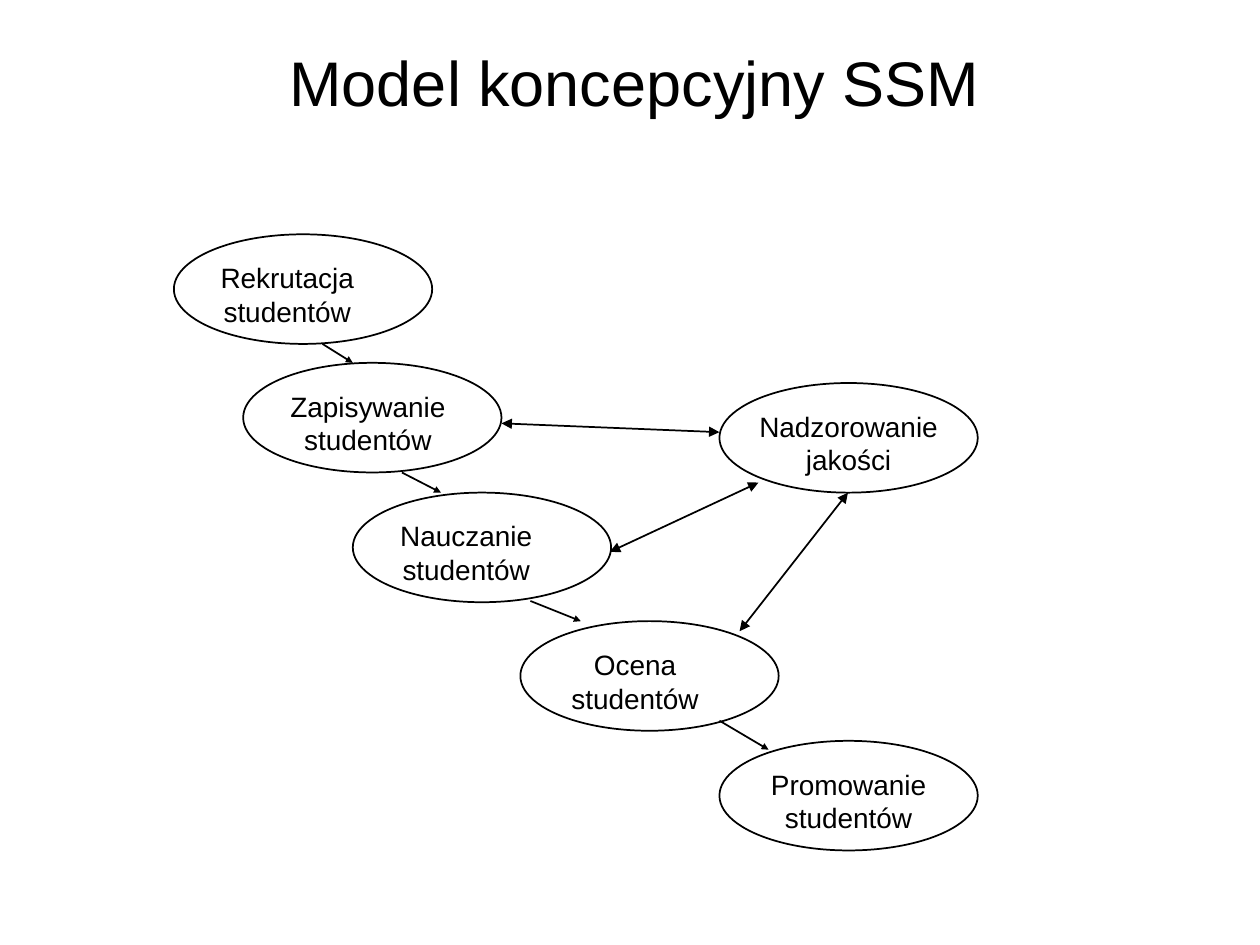
from dataclasses import dataclass

from lxml import etree
from pptx import Presentation
from pptx.dml.color import RGBColor
from pptx.enum.shapes import MSO_CONNECTOR, MSO_SHAPE
from pptx.enum.text import MSO_ANCHOR, PP_ALIGN
from pptx.oxml.ns import qn
from pptx.util import Inches, Pt

ELLIPSE = MSO_SHAPE.OVAL
STRAIGHT = MSO_CONNECTOR.STRAIGHT
CENTER = PP_ALIGN.CENTER
TOP, MIDDLE = MSO_ANCHOR.TOP, MSO_ANCHOR.MIDDLE


@dataclass(frozen=True)
class Theme:
    font: str = "Arial"
    ink: RGBColor = RGBColor(0, 0, 0)
    title: Pt = Pt(36)
    body: Pt = Pt(16)
    line: Pt = Pt(1)


THEME = Theme()
OVAL_W, OVAL_H = 2.05, 0.87
LABEL_DY, LABEL_H = 0.16, 0.64

ACTIVITIES = [
    (1.38, 1.86, 0.23, 1.34, ["Rekrutacja studentów"]),
    (1.93, 2.88, 0.24, 1.50, ["Zapisywanie studentów"]),
    (2.80, 3.91, 0.23, 1.34, ["Nauczanie studentów"]),
    (4.13, 4.93, 0.24, 1.34, ["Ocena studentów"]),
    (5.71, 5.88, 0.24, 1.57, ["Promowanie", "studentów"]),
    (5.71, 3.04, 0.16, 1.73, ["Nadzorowanie jakości"]),
]
STEPS = [
    (2.56, 2.73, 2.80, 2.88),
    (3.19, 3.75, 3.50, 3.91),
    (4.21, 4.77, 4.61, 4.93),
    (5.71, 5.72, 6.10, 5.95),
]
CONTROLS = [
    (3.98, 3.36, 5.71, 3.43),
    (4.84, 4.38, 6.02, 3.83),
    (6.73, 3.91, 5.87, 5.01),
]


def write_text(tf, lines, size, anchor):
    tf.word_wrap = True
    tf.vertical_anchor = anchor
    for i, line in enumerate(lines):
        p = tf.paragraphs[0] if i == 0 else tf.add_paragraph()
        p.text = line
        p.alignment = CENTER
        p.space_before = Pt(0)
        p.font.name = THEME.font
        p.font.size = size
        p.font.color.rgb = THEME.ink


def set_title(s, text):
    sp = s.shapes.title
    sp.left, sp.top = Inches(1.69), Inches(0.29)
    sp.width, sp.height = Inches(6.69), Inches(0.71)
    write_text(sp.text_frame, [text], THEME.title, MIDDLE)


def add_activity(s, x, y, label_dx, label_w, lines):
    sp = s.shapes.add_shape(ELLIPSE, Inches(x), Inches(y), Inches(OVAL_W), Inches(OVAL_H))
    sp.shadow.inherit = False
    sp.fill.background()
    sp.line.color.rgb = THEME.ink
    sp.line.width = THEME.line
    label = s.shapes.add_textbox(
        Inches(x + label_dx), Inches(y + LABEL_DY), Inches(label_w), Inches(LABEL_H)
    )
    write_text(label.text_frame, lines, THEME.body, TOP)


def add_arrow(s, ends, heads, size):
    cx = s.shapes.add_connector(STRAIGHT, *map(Inches, ends))
    cx.line.color.rgb = THEME.ink
    cx.line.width = THEME.line
    ln = cx.line._get_or_add_ln()
    for head in heads:
        etree.SubElement(ln, qn(f"a:{head}"), type="triangle", w=size, len=size)
    etree.SubElement(cx._element.spPr, qn("a:effectLst"))


def main():
    prs = Presentation()
    prs.slide_width, prs.slide_height = Inches(10), Inches(7.5)
    s = prs.slides.add_slide(prs.slide_layouts[5])
    set_title(s, "Model koncepcyjny SSM")
    for activity in ACTIVITIES:
        add_activity(s, *activity)
    for ends in STEPS:
        add_arrow(s, ends, ["tailEnd"], "sm")
    for ends in CONTROLS:
        add_arrow(s, ends, ["headEnd", "tailEnd"], "med")
    prs.save("out.pptx")


if __name__ == "__main__":
    main()
